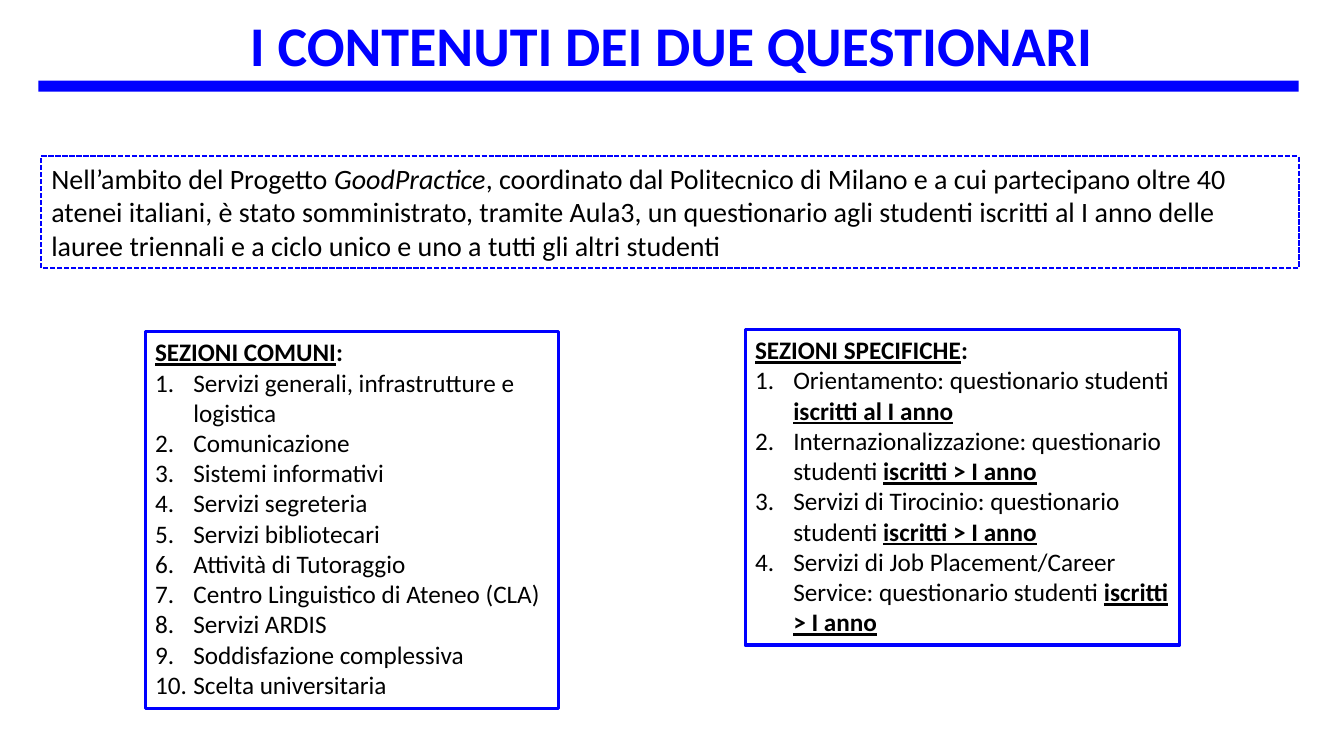
import pptx
import pptx.dml.color
import pptx.enum.dml
import pptx.enum.shapes
import pptx.enum.text
import pptx.util
from lxml import etree

SLIDE_WIDTH = pptx.util.Inches(13.33)
SLIDE_HEIGHT = pptx.util.Inches(7.5)
BLUE = "0000FF"
BLACK = "000000"
FONT = "Calibri"
NUMBER_INDENT = pptx.util.Inches(0.38)
A = "{http://schemas.openxmlformats.org/drawingml/2006/main}"

COMMON_SECTIONS = [
    "Servizi generali, infrastrutture e logistica",
    "Comunicazione",
    "Sistemi informativi",
    "Servizi segreteria",
    "Servizi bibliotecari",
    "Attività di Tutoraggio",
    "Centro Linguistico di Ateneo (CLA)",
    "Servizi ARDIS",
    "Soddisfazione complessiva",
    "Scelta universitaria",
]
SPECIFIC_SECTIONS = [
    ("Orientamento: questionario studenti ", "iscritti al I anno"),
    ("Internazionalizzazione: questionario studenti ", "iscritti > I anno"),
    ("Servizi di Tirocinio: questionario studenti ", "iscritti > I anno"),
    ("Servizi di Job Placement/Career Service: questionario studenti ",
     "iscritti > I anno"),
]


def color(hex_string):
    return pptx.dml.color.RGBColor.from_string(hex_string)


def place(left, top, width, height):
    """Turn percentages of the slide into a position and a size."""
    return (int(SLIDE_WIDTH * left / 100), int(SLIDE_HEIGHT * top / 100),
            int(SLIDE_WIDTH * width / 100), int(SLIDE_HEIGHT * height / 100))


def add_run(paragraph, text, size, ink=BLACK, style=""):
    """Style letters: b bold, i italic, u underlined."""
    run = paragraph.add_run()
    run.text = text
    run.font.name = FONT
    run.font.size = pptx.util.Pt(size)
    run.font.color.rgb = color(ink)
    run.font.bold = "b" in style
    run.font.italic = "i" in style
    run.font.underline = "u" in style


def number(paragraph):
    properties = paragraph._p.get_or_add_pPr()
    properties.set("marL", str(NUMBER_INDENT))
    properties.set("indent", str(-NUMBER_INDENT))
    etree.SubElement(properties, A + "buFont", typeface="+mj-lt")
    etree.SubElement(properties, A + "buAutoNum", type="arabicPeriod")


def add_rectangle(slide, area):
    rectangle = slide.shapes.add_shape(
        pptx.enum.shapes.MSO_SHAPE.RECTANGLE, *place(*area))
    rectangle.shadow.inherit = False
    return rectangle


def add_frame(slide, area, weight, dash=None):
    """Blue outlined box, ready for left-aligned text."""
    frame = add_rectangle(slide, area)
    frame.fill.background()
    frame.line.color.rgb = color(BLUE)
    frame.line.width = pptx.util.Pt(weight)
    if dash:
        frame.line.dash_style = dash
    text = frame.text_frame
    text.word_wrap = True
    text.vertical_anchor = pptx.enum.text.MSO_ANCHOR.TOP
    text.paragraphs[0].alignment = pptx.enum.text.PP_ALIGN.LEFT
    return text


def add_title(slide, area, wording):
    text = slide.shapes.add_textbox(*place(*area)).text_frame
    text.word_wrap = True
    text.margin_left = text.margin_right = text.margin_bottom = 0
    text.margin_top = pptx.util.Inches(0.01)
    heading = text.paragraphs[0]
    heading.alignment = pptx.enum.text.PP_ALIGN.CENTER
    heading.line_spacing = pptx.util.Pt(40.2)
    add_run(heading, wording, 40, BLUE, "b")


def add_sections(slide, area, heading, sections):
    """Framed numbered list; each section is a list of (text, style) runs."""
    text = add_frame(slide, area, 2.25)
    add_run(text.paragraphs[0], heading, 18, style="bu")
    add_run(text.paragraphs[0], ":", 18, style="b")
    for section in sections:
        item = text.add_paragraph()
        item.alignment = pptx.enum.text.PP_ALIGN.LEFT
        number(item)
        for wording, style in section:
            add_run(item, wording, 18, style=style)


def main():
    deck = pptx.Presentation()
    deck.slide_width, deck.slide_height = SLIDE_WIDTH, SLIDE_HEIGHT
    slide = deck.slides.add_slide(deck.slide_layouts[6])

    # Title and rule beneath it
    rule = add_rectangle(slide, (2.85, 10.67, 93.77, 1.47))
    rule.fill.solid()
    rule.fill.fore_color.rgb = color(BLUE)
    rule.line.fill.background()
    add_title(slide, (3.08, 2.67, 93.7, 7.73), "I CONTENUTI DEI DUE QUESTIONARI")

    # Introduction
    introduction = add_frame(slide, (3.08, 20.67, 93.55, 14.8), 1.25,
                             pptx.enum.dml.MSO_LINE.SQUARE_DOT).paragraphs[0]
    add_run(introduction, "Nell’ambito del Progetto ", 20)
    add_run(introduction, "GoodPractice", 20, style="i")
    add_run(introduction, ", coordinato dal Politecnico di Milano e a cui "
            "partecipano oltre 40 atenei italiani, è stato somministrato, "
            "tramite Aula3, un questionario agli studenti iscritti al I anno "
            "delle lauree triennali e a ciclo unico e uno a tutti gli altri "
            "studenti", 20)

    # Questionnaire sections
    add_sections(slide, (10.8, 43.87, 30.76, 49.87), "SEZIONI COMUNI",
                 [[(name, "")] for name in COMMON_SECTIONS])
    add_sections(slide, (55.44, 43.6, 32.33, 41.73), "SEZIONI SPECIFICHE",
                 [[(name, ""), (students, "bu")]
                  for name, students in SPECIFIC_SECTIONS])

    deck.save("out.pptx")


if __name__ == "__main__":
    main()
